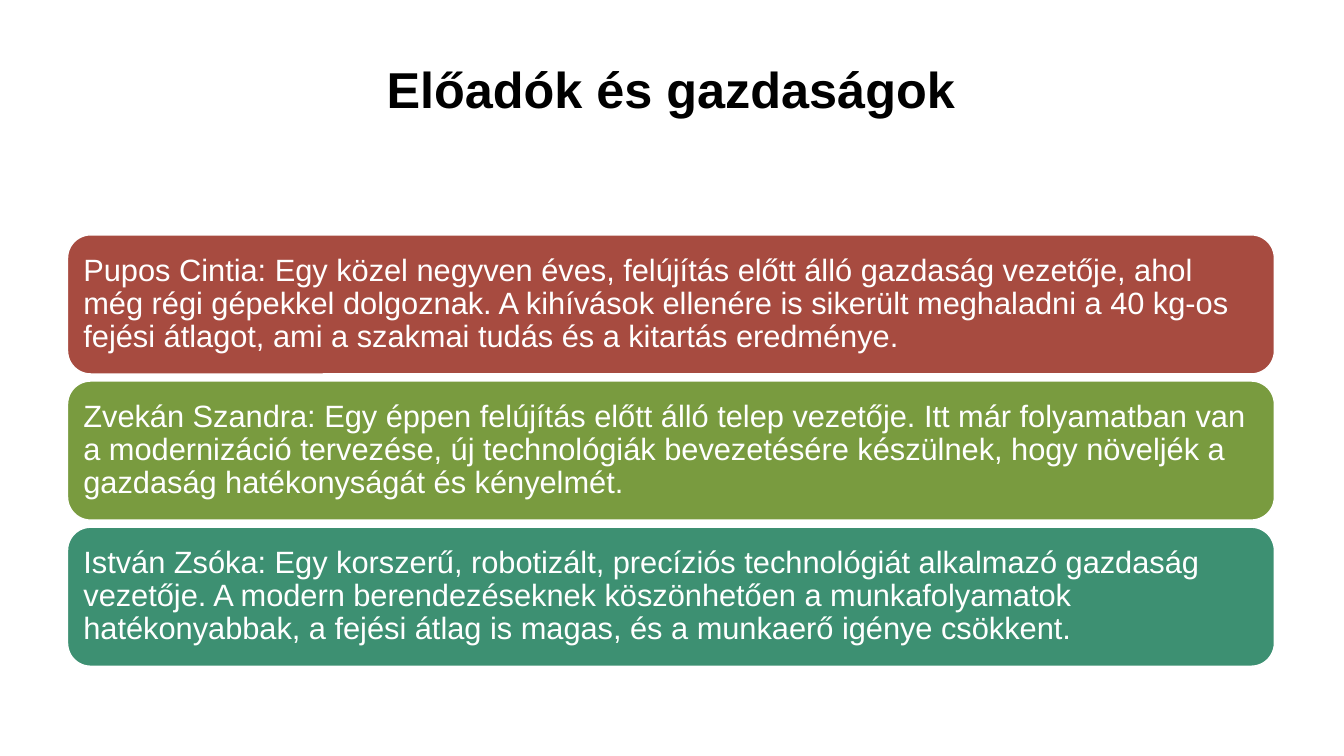
import pptx
import pptx.util
import pptx.dml.color
import pptx.enum.shapes
import pptx.enum.text

RGBColor = pptx.dml.color.RGBColor
Align = pptx.enum.text.PP_ALIGN
Anchor = pptx.enum.text.MSO_ANCHOR
BLACK = RGBColor(0x00, 0x00, 0x00)
WHITE = RGBColor(0xFF, 0xFF, 0xFF)
RED = RGBColor(0xA7, 0x4B, 0x40)
GREEN = RGBColor(0x79, 0x9B, 0x3F)
TEAL = RGBColor(0x3D, 0x90, 0x72)

PX = 9144
LEFT, WIDTH = 67, 1197
TOP, HEIGHT, STEP = 233, 138, 145

CARDS = [
    (RED, "Pupos Cintia: Egy közel negyven éves, felújítás előtt álló gazdaság "
          "vezetője, ahol még régi gépekkel dolgoznak. A kihívások ellenére is "
          "sikerült meghaladni a 40 kg-os fejési átlagot, ami a szakmai tudás "
          "és a kitartás eredménye."),
    (GREEN, "Zvekán Szandra: Egy éppen felújítás előtt álló telep vezetője. Itt "
            "már folyamatban van a modernizáció tervezése, új technológiák "
            "bevezetésére készülnek, hogy növeljék a gazdaság hatékonyságát "
            "és kényelmét."),
    (TEAL, "István Zsóka: Egy korszerű, robotizált, precíziós technológiát "
           "alkalmazó gazdaság vezetője. A modern berendezéseknek köszönhetően "
           "a munkafolyamatok hatékonyabbak, a fejési átlag is magas, és a "
           "munkaerő igénye csökkent."),
]


class Deck:
    """Holds the text style and the current slide, and draws its elements."""

    font = "Arial"
    inset = 9

    def __init__(self, width, height):
        self.show = pptx.Presentation()
        self.show.slide_width = width * PX
        self.show.slide_height = height * PX
        self.slide = self.show.slides.add_slide(self.show.slide_layouts[6])

    def label(self, shape, text, size, color, align, anchor, bold=False):
        frame = shape.text_frame
        frame.word_wrap = True
        frame.vertical_anchor = anchor
        frame.margin_left = frame.margin_right = self.inset * PX
        para = frame.paragraphs[0]
        para.text = text
        para.alignment = align
        para.line_spacing = 0.9
        para.font.name = self.font
        para.font.size = pptx.util.Pt(size)
        para.font.bold = bold
        para.font.color.rgb = color

    def title(self, text, left, top, width, height):
        box = self.slide.shapes.add_textbox(
            left * PX, top * PX, width * PX, height * PX)
        self.label(box, text, 36, BLACK, Align.CENTER, Anchor.TOP, bold=True)

    def card(self, text, fill, left, top, width, height):
        kind = pptx.enum.shapes.MSO_SHAPE.ROUNDED_RECTANGLE
        card = self.slide.shapes.add_shape(
            kind, left * PX, top * PX, width * PX, height * PX)
        card.shadow.inherit = False
        card.fill.solid()
        card.fill.fore_color.rgb = fill
        card.line.color.rgb = WHITE
        card.line.width = pptx.util.Pt(1)
        self.label(card, text, 22, WHITE, Align.LEFT, Anchor.MIDDLE)


def main():
    deck = Deck(1333, 750)
    deck.title("Előadók és gazdaságok", LEFT, 60, WIDTH, 124)
    for row, (fill, text) in enumerate(CARDS):
        deck.card(text, fill, LEFT, TOP + row * STEP, WIDTH, HEIGHT)
    deck.show.save("out.pptx")


if __name__ == "__main__":
    main()
